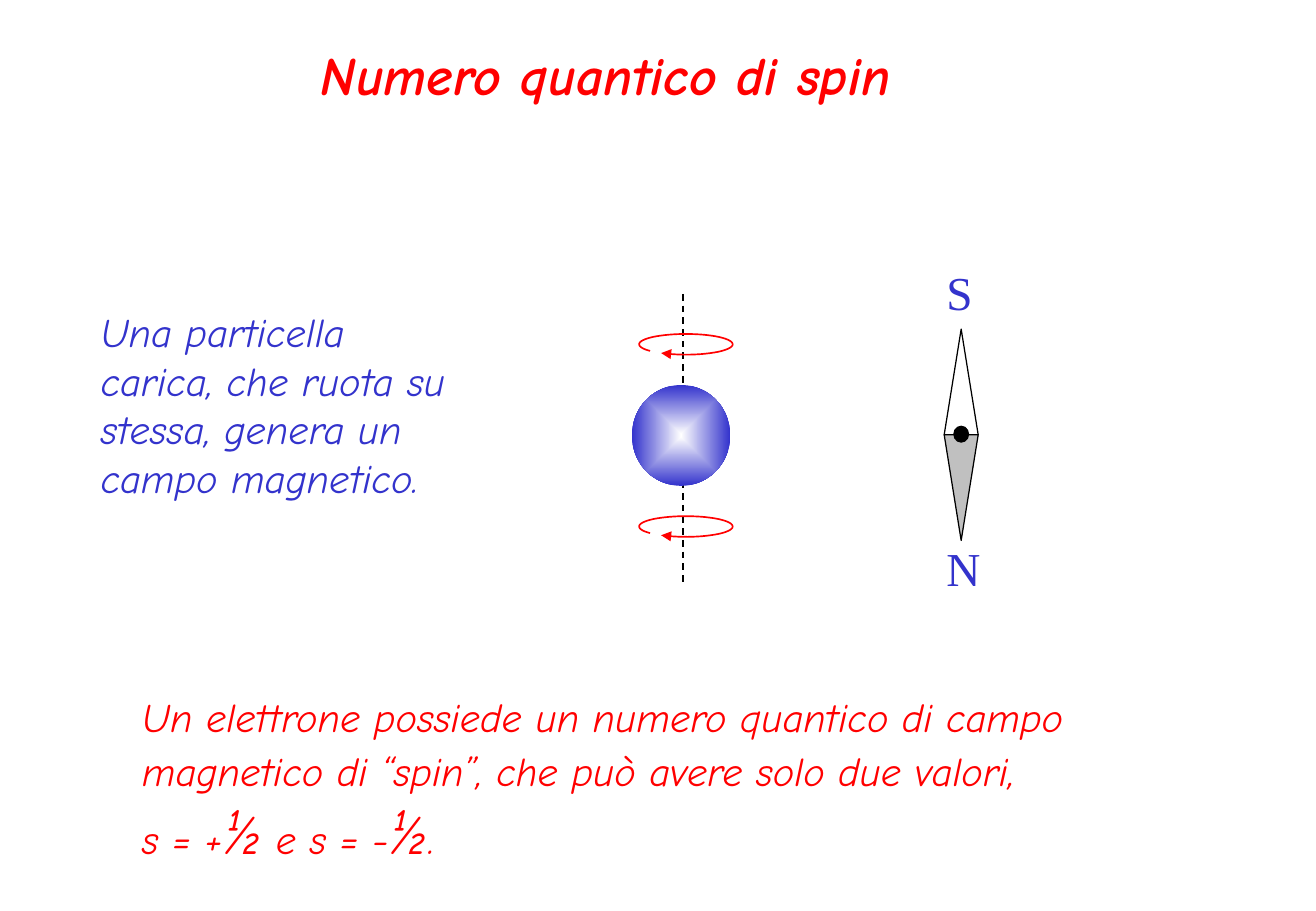
import math

import pptx
import pptx.dml.color
import pptx.enum.dml
import pptx.enum.shapes
import pptx.enum.text
import pptx.oxml
import pptx.oxml.ns
import pptx.util

PX = 9144
COLOURS = {"red": "FF0000", "blue": "3333CC", "black": "000000", "white": "FFFFFF", "grey": "C0C0C0"}
COMIC = "Comic Neue"
TIMES = "Times New Roman"
SHAPE = pptx.enum.shapes.MSO_SHAPE


def px(*lengths):
    return [pptx.util.Emu(length * PX) for length in lengths]


def rgb(colour):
    return pptx.dml.color.RGBColor.from_string(COLOURS[colour])


def drawing_element(xml):
    return pptx.oxml.parse_xml(xml.replace("/>", f" {pptx.oxml.ns.nsdecls('a')}/>", 1)
                               if xml.count("<") == 1
                               else xml.replace(">", f" {pptx.oxml.ns.nsdecls('a')}>", 1))


def write_text(holder, paragraphs, size=24, colour="blue", font=COMIC, bold=False, italic=True,
               spacing=None, wrap=True):
    frame = holder.text_frame
    frame.word_wrap = wrap
    frame.vertical_anchor = pptx.enum.text.MSO_ANCHOR.TOP
    frame.auto_size = pptx.enum.text.MSO_AUTO_SIZE.SHAPE_TO_FIT_TEXT
    for index, runs in enumerate(paragraphs):
        paragraph = frame.add_paragraph() if index else frame.paragraphs[0]
        paragraph.alignment = pptx.enum.text.PP_ALIGN.LEFT
        paragraph.line_spacing = spacing
        for words, run_size in runs:
            run = paragraph.add_run()
            run.text = words
            run.font.size = pptx.util.Pt(run_size or size)
            run.font.name = font
            run.font.bold = bold
            run.font.italic = italic
            run.font.color.rgb = rgb(colour)


def draw_shape(parent, preset, box, fill=None, line=None, weight=0.75):
    shape = parent.shapes.add_shape(preset, *px(*box))
    shape.shadow.inherit = False
    if fill:
        shape.fill.solid()
        shape.fill.fore_color.rgb = rgb(fill)
    else:
        shape.fill.background()
    if line:
        shape.line.color.rgb = rgb(line)
        shape.line.width = pptx.util.Pt(weight)
    else:
        shape.line.fill.background()
    return shape


def draw_title(slide, box):
    title = slide.shapes.title
    title.left, title.top, title.width, title.height = px(*box)
    write_text(title, [[("Numero quantico di spin", None)]], size=32, colour="red", bold=True)


def draw_paragraphs(slide, box, paragraphs, **text_format):
    write_text(slide.shapes.add_textbox(*px(*box)), paragraphs, **text_format)


def draw_rotation(parent, box):
    left, top, width, height = box
    start, sweep = 140, 342
    points = []
    for step in range(61):
        angle = math.radians(start + sweep * step / 60)
        points.append((round((left + width / 2 * (1 + math.cos(angle))) * PX),
                       round((top + height / 2 * (1 + math.sin(angle))) * PX)))
    builder = parent.shapes.build_freeform(*points[0])
    builder.add_line_segments(points[1:], close=False)
    rotation = builder.convert_to_shape()
    rotation.shadow.inherit = False
    rotation.fill.background()
    rotation.line.color.rgb = rgb("red")
    rotation.line.width = pptx.util.Pt(1)
    rotation.line._get_or_add_ln().append(drawing_element('<a:tailEnd type="triangle"/>'))


def draw_particle(slide, box):
    left, top, width, height = box
    particle = slide.shapes.add_group_shape()
    axis_x = left + 42
    axis = particle.shapes.add_connector(pptx.enum.shapes.MSO_CONNECTOR.STRAIGHT,
                                         *px(axis_x, top, axis_x, top + height))
    axis.line.color.rgb = rgb("black")
    axis.line.width = pptx.util.Pt(1)
    axis.line.dash_style = pptx.enum.dml.MSO_LINE.DASH
    axis._element.spPr.append(drawing_element("<a:effectLst/>"))

    sphere = draw_shape(particle, SHAPE.OVAL, (left, top + 75, width, 83))
    sphere.fill.gradient()
    for stop, colour in zip(sphere.fill.gradient_stops, ("white", "blue")):
        stop.color.rgb = rgb(colour)
    gradient = sphere._element.spPr.find(pptx.oxml.ns.qn("a:gradFill"))
    gradient.remove(gradient.find(pptx.oxml.ns.qn("a:lin")))
    gradient.append(drawing_element('<a:path path="shape"><a:fillToRect l="50000" t="50000" '
                                    'r="50000" b="50000"/></a:path>'))
    for rotation_top in (top + 33, top + 183):
        draw_rotation(particle, (left + 6, rotation_top, 77, 17))


def draw_compass(slide, box):
    left, top, width, height = box
    compass = slide.shapes.add_group_shape()
    half = height // 2
    draw_shape(compass, SHAPE.ISOSCELES_TRIANGLE, (left, top, width, half), "white", "black")
    north = draw_shape(compass, SHAPE.ISOSCELES_TRIANGLE, (left, top + half, width, half), "grey", "black")
    north._element.spPr.get_or_add_xfrm().set("flipV", "1")
    draw_shape(compass, SHAPE.OVAL, (left + 8, top + half - 7, 12, 13), "black", "black")
    for pole, pole_top, pole_width in (("N", top + height - 7, 48), ("S", top - 59, 42)):
        label = compass.shapes.add_textbox(*px(left - 8, pole_top, pole_width, 57))
        write_text(label, [[(pole, None)]], size=28, font=TIMES, italic=False, wrap=False)


def main():
    deck = pptx.Presentation()
    deck.slide_width, deck.slide_height = px(1083, 750)
    slide = deck.slides.add_slide(deck.slide_layouts.get_by_name("Title Only"))
    draw_title(slide, (254, 29, 558, 63))
    draw_particle(slide, (520, 242, 81, 241))
    draw_compass(slide, (777, 271, 28, 175))
    draw_paragraphs(slide, (107, 561, 885, 158), [
        [("Un elettrone possiede un numero quantico di campo magnetico di “spin”, "
          "che può avere solo due valori,", None)],
        [("s = +", None), ("½", 32), (" e s = -", None), ("½", 32), (".", None)],
    ], colour="red", spacing=1.1)
    draw_paragraphs(slide, (73, 248, 316, 212), [
        [("Una particella carica, che ruota su stessa, genera un campo magnetico.", None)],
    ])
    deck.save("out.pptx")


if __name__ == "__main__":
    main()
